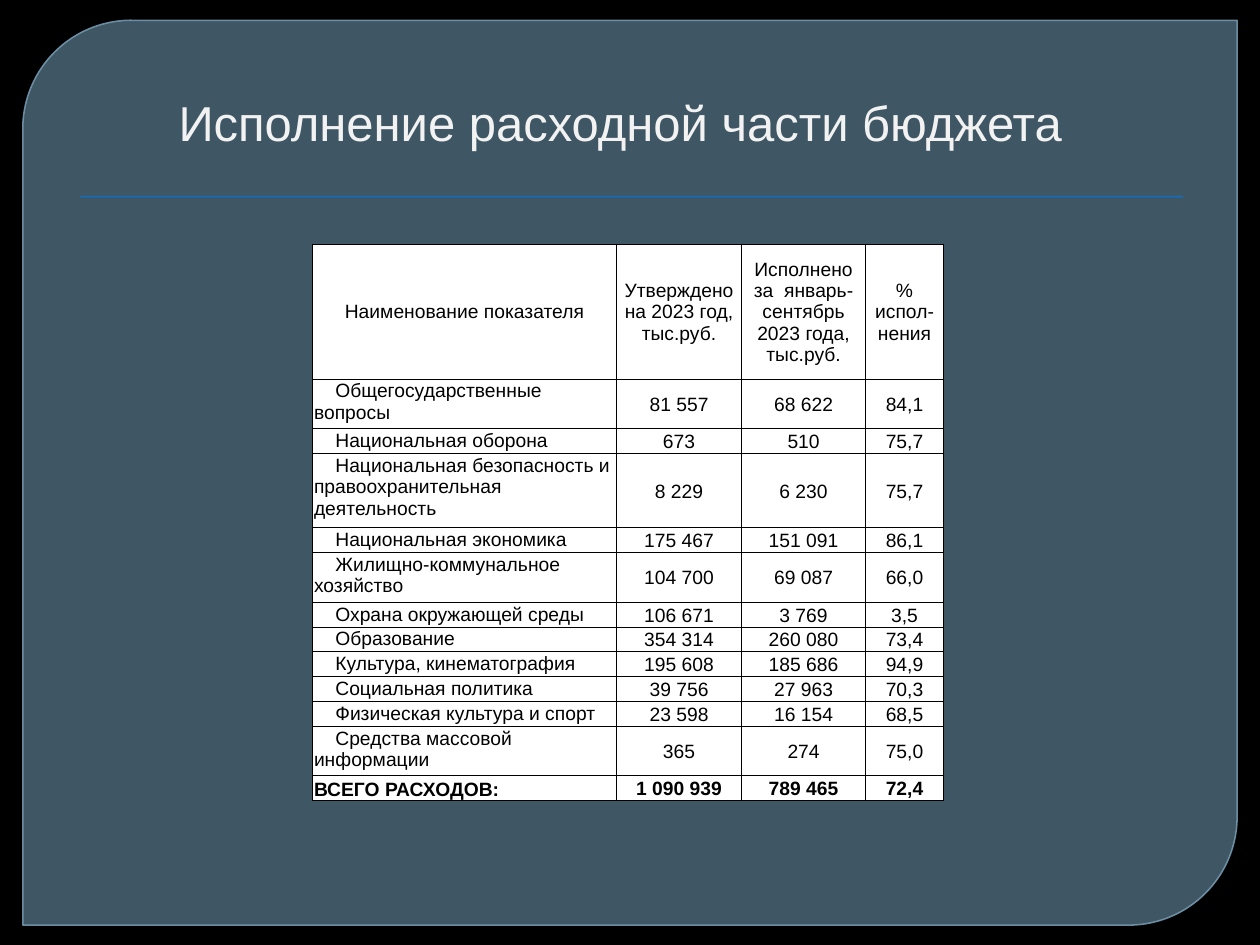
from lxml.etree import SubElement
from pptx import Presentation
from pptx.dml.color import RGBColor
from pptx.enum.shapes import MSO_SHAPE as Shape
from pptx.enum.text import MSO_ANCHOR as Anchor, PP_ALIGN as Align
from pptx.oxml import parse_xml
from pptx.oxml.ns import nsdecls, qn
from pptx.util import Cm, Pt

BLACK = RGBColor(0x00, 0x00, 0x00)
WHITE = RGBColor(0xFF, 0xFF, 0xFF)
TITLE_COLOR = RGBColor(0xF2, 0xF2, 0xF2)
PANEL_FILL = RGBColor(0x61, 0x86, 0x9C)
PANEL_EDGE = RGBColor(0x77, 0x9B, 0xB2)
RULE_BLUE = RGBColor(0x0F, 0x6F, 0xC6)

HEADINGS = (
    "Наименование показателя",
    "Утверждено на 2023 год, тыс.руб.",
    "Исполнено за  январь-сентябрь 2023 года, тыс.руб.",
    "% испол-нения",
)
# Name, approved, executed, percent, number of text lines
EXPENSES = (
    ("Общегосударственные вопросы", "81 557", "68 622", "84,1", 2),
    ("Национальная оборона", "673", "510", "75,7", 1),
    ("Национальная безопасность и правоохранительная деятельность",
     "8 229", "6 230", "75,7", 3),
    ("Национальная экономика", "175 467", "151 091", "86,1", 1),
    ("Жилищно-коммунальное хозяйство", "104 700", "69 087", "66,0", 2),
    ("Охрана окружающей среды", "106 671", "3 769", "3,5", 1),
    ("Образование", "354 314", "260 080", "73,4", 1),
    ("Культура, кинематография", "195 608", "185 686", "94,9", 1),
    ("Социальная политика", "39 756", "27 963", "70,3", 1),
    ("Физическая культура и спорт", "23 598", "16 154", "68,5", 1),
    ("Средства массовой информации", "365", "274", "75,0", 2),
)
TOTAL = ("ВСЕГО РАСХОДОВ:", "1 090 939", "789 465", "72,4")

COLUMN_WIDTHS = (Cm(6.13), Cm(2.52), Cm(2.5), Cm(1.57))
HEADING_HEIGHT = Cm(2.72)
LINE_HEIGHT = Cm(0.5)
NAME_INDENT = Cm(0.43)


def write(frame, text, size=11, color=BLACK, bold=False, align=Align.CENTER,
          indent=0):
    paragraph = frame.paragraphs[0]
    paragraph.alignment = align
    if indent:
        properties = paragraph._p.get_or_add_pPr()
        properties.set("marL", "0")
        properties.set("indent", str(indent))
    run = paragraph.add_run()
    run.text = text
    run.font.name = "Arial"
    run.font.size = Pt(size)
    run.font.bold = bold
    run.font.color.rgb = color


def set_opacity(parent, percent):
    """Make the solid fill directly inside an XML element translucent."""
    color = parent.find(qn("a:solidFill"))[0]
    SubElement(color, qn("a:alpha")).set("val", str(percent * 1000))


def add_filled(slide, preset, left, top, width, height, fill):
    shape = slide.shapes.add_shape(preset, left, top, width, height)
    shape.shadow.inherit = False
    shape.fill.solid()
    shape.fill.fore_color.rgb = fill
    shape.line.fill.background()
    return shape


def add_panel(slide):
    panel = add_filled(slide, Shape.ROUND_2_DIAG_RECTANGLE, Cm(0.46), Cm(0.41),
                       Cm(24.48), Cm(18.24), PANEL_FILL)
    panel.adjustments[0] = 0.12
    panel.adjustments[1] = 0
    panel.line.color.rgb = PANEL_EDGE
    panel.line.width = Pt(0.87)
    properties = panel._element.spPr
    set_opacity(properties, 65)
    set_opacity(properties.find(qn("a:ln")), 88)


def add_title(slide, text):
    title = slide.shapes.add_textbox(Cm(1.07), Cm(0.74), Cm(22.86), Cm(2.44))
    frame = title.text_frame
    frame.word_wrap = True
    frame.vertical_anchor = Anchor.BOTTOM
    write(frame, text, size=28, color=TITLE_COLOR)


def add_borders(cell):
    properties = cell._tc.get_or_add_tcPr()
    for index, side in enumerate(("lnL", "lnR", "lnT", "lnB")):
        properties.insert(index, parse_xml(
            f'<a:{side} {nsdecls("a")} w="{Pt(0.5)}"><a:solidFill>'
            f'<a:srgbClr val="{BLACK}"/></a:solidFill></a:{side}>'))


def fill_cell(cell, text, anchor=Anchor.MIDDLE, **text_format):
    cell.fill.solid()
    cell.fill.fore_color.rgb = WHITE
    cell.margin_left = cell.margin_right = cell.margin_top = Cm(0.03)
    cell.margin_bottom = 0
    cell.vertical_anchor = anchor
    write(cell.text_frame, text, **text_format)
    add_borders(cell)


def add_budget_table(slide):
    heights = [HEADING_HEIGHT,
               *(LINE_HEIGHT * expense[-1] for expense in EXPENSES),
               LINE_HEIGHT]
    table = slide.shapes.add_table(
        len(heights), len(COLUMN_WIDTHS), Cm(6.3), Cm(4.92),
        sum(COLUMN_WIDTHS), sum(heights)).table
    for column, width in zip(table.columns, COLUMN_WIDTHS):
        column.width = width
    for row, height in zip(table.rows, heights):
        row.height = height

    for column, heading in enumerate(HEADINGS):
        fill_cell(table.cell(0, column), heading)

    for row, (name, *figures, _) in enumerate(EXPENSES, start=1):
        fill_cell(table.cell(row, 0), name, anchor=Anchor.TOP,
                  align=Align.LEFT, indent=NAME_INDENT)
        for column, figure in enumerate(figures, start=1):
            fill_cell(table.cell(row, column), figure)

    total_row = len(heights) - 1
    label, *sums = TOTAL
    fill_cell(table.cell(total_row, 0), label, anchor=Anchor.BOTTOM,
              align=Align.LEFT, bold=True)
    for column, figure in enumerate(sums, start=1):
        fill_cell(table.cell(total_row, column), figure, bold=True)


def main():
    deck = Presentation()
    deck.slide_width, deck.slide_height = Cm(25.4), Cm(19.05)
    slide = deck.slides.add_slide(deck.slide_layouts[6])
    slide.background.fill.solid()
    slide.background.fill.fore_color.rgb = BLACK
    add_panel(slide)
    add_filled(slide, Shape.RECTANGLE, Cm(1.62), Cm(3.95), Cm(22.23), Cm(0.03),
               RULE_BLUE)
    add_title(slide, "Исполнение расходной части бюджета")
    add_budget_table(slide)
    deck.save("out.pptx")


if __name__ == "__main__":
    main()
